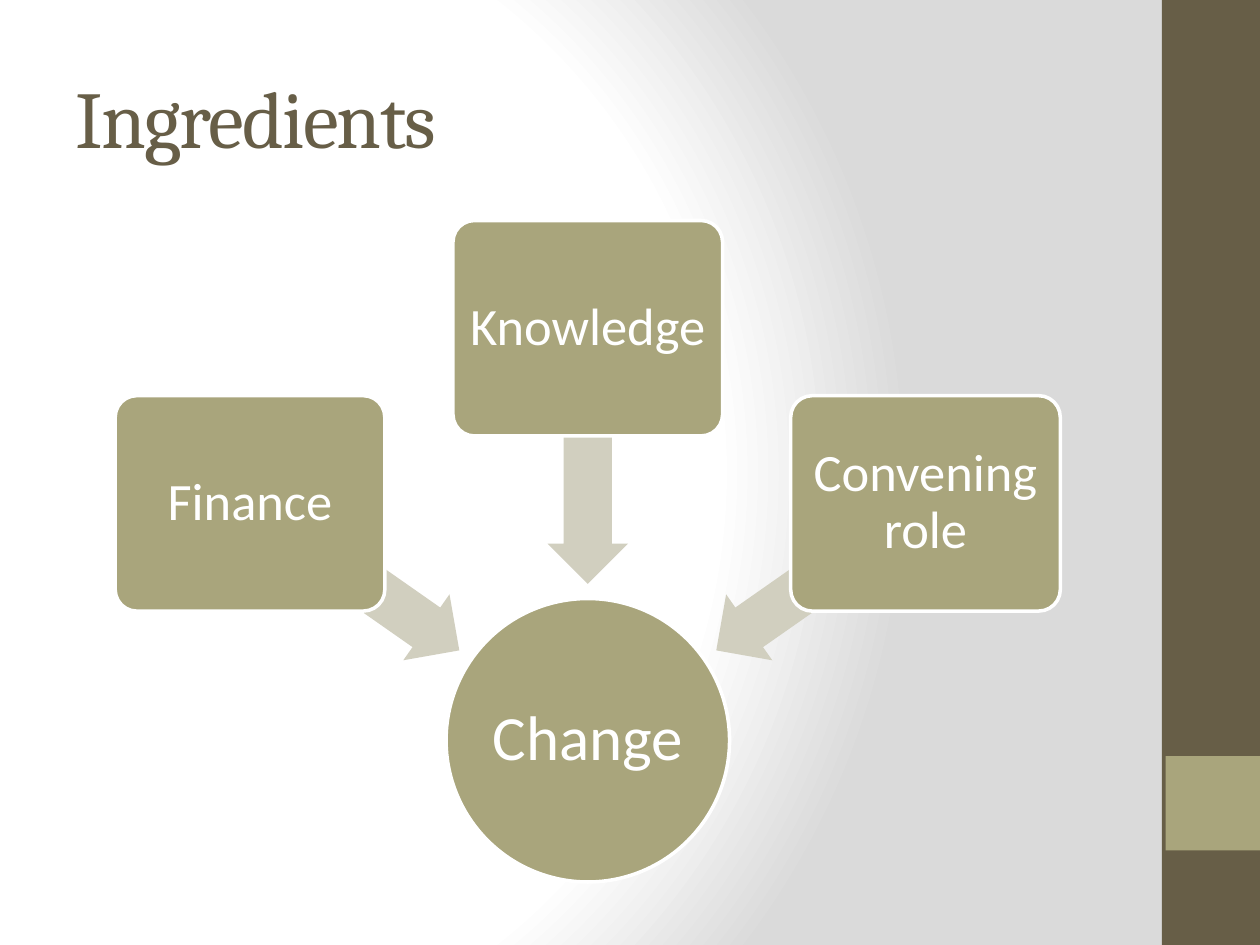
from dataclasses import dataclass

from lxml import etree
from pptx import Presentation
from pptx.dml.color import RGBColor
from pptx.enum.shapes import MSO_SHAPE
from pptx.enum.text import MSO_ANCHOR, MSO_AUTO_SIZE, PP_ALIGN
from pptx.oxml import parse_xml
from pptx.oxml.ns import nsdecls
from pptx.util import Pt

RECT = MSO_SHAPE.RECTANGLE
ROUND = MSO_SHAPE.ROUNDED_RECTANGLE
OVAL = MSO_SHAPE.OVAL
ARROW = MSO_SHAPE.LEFT_ARROW
LEFT, CENTER = PP_ALIGN.LEFT, PP_ALIGN.CENTER
MIDDLE = MSO_ANCHOR.MIDDLE
NO_FIT = MSO_AUTO_SIZE.NONE

BROWN = RGBColor(0x67, 0x5E, 0x47)
OLIVE = RGBColor(0xA9, 0xA5, 0x7C)
PALE = RGBColor(0xD1, 0xCF, 0xBF)
WHITE = RGBColor(0xFF, 0xFF, 0xFF)
GRAY = RGBColor(0xDA, 0xDA, 0xDA)

MID = 335.9
BOX_W, BOX_H, BOX_GAP = 154.1, 123.1, 193
ARROW_W, ARROW_H, ARROW_GAP = 146, 46, 133.2
DISC = 162


@dataclass
class Input:
    label: str
    side: int
    top: float
    arrow_y: float
    angle: float


INPUTS = [
    Input("Finance", -1, 226.1, 329.8, 215),
    Input("Knowledge", 0, 126, 260.6, 270),
    Input("Convening role", 1, 226.1, 329.8, 325),
]


def set_back(slide) -> None:
    stops = "".join(
        f'<a:gs pos="{pos}"><a:srgbClr val="{color}"/></a:gs>'
        for pos, color in ((0, WHITE), (75000, WHITE), (100000, GRAY))
    )
    back = parse_xml(
        f'<p:bg {nsdecls("p", "a")}><p:bgPr><a:gradFill rotWithShape="1">'
        f'<a:gsLst>{stops}</a:gsLst><a:path path="circle">'
        '<a:fillToRect l="20000" t="50000" r="100000" b="50000"/>'
        '</a:path></a:gradFill></p:bgPr></p:bg>'
    )
    etree.SubElement(back[0], f"{{{back.nsmap['a']}}}effectLst")
    slide.element.cSld.insert(0, back)


def put_shape(slide, kind, x: float, y: float, w: float, h: float,
              fill: RGBColor, edge: bool = False, angle: float = 0):
    shape = slide.shapes.add_shape(kind, Pt(x), Pt(y), Pt(w), Pt(h))
    shape.shadow.inherit = False
    shape.fill.solid()
    shape.fill.fore_color.rgb = fill
    shape.rotation = angle
    if edge:
        shape.line.color.rgb = WHITE
        shape.line.width = Pt(2)
    else:
        shape.line.fill.background()
    return shape


def put_text(shape, text: str, *, size: float, font: str, color: RGBColor,
             align=CENTER, inset: float = 0, leading: float = 1,
             track: float = 0) -> None:
    frame = shape.text_frame
    frame.word_wrap = True
    frame.auto_size = NO_FIT
    frame.vertical_anchor = MIDDLE
    if inset:
        frame.margin_left = frame.margin_right = Pt(inset)
        frame.margin_top = frame.margin_bottom = Pt(inset)
    para = frame.paragraphs[0]
    para.alignment = align
    para.line_spacing = leading
    run = para.add_run()
    run.text = text
    run.font.size = Pt(size)
    run.font.name = font
    run.font.color.rgb = color
    if track:
        run.font._element.set("spc", str(round(track * 100)))


def put_input(slide, item: Input) -> None:
    put_shape(slide, ARROW, MID + item.side * ARROW_GAP - ARROW_W / 2,
              item.arrow_y - ARROW_H / 2, ARROW_W, ARROW_H, PALE,
              angle=item.angle).adjustments[0] = 0.6
    box = put_shape(slide, ROUND, MID + item.side * BOX_GAP - BOX_W / 2,
                    item.top, BOX_W, BOX_H, OLIVE, edge=True)
    box.adjustments[0] = 0.1
    put_text(box, item.label, size=30, font="Calibri", color=WHITE,
             inset=4.3, leading=0.9)


def main() -> None:
    deck = Presentation()
    deck.slide_width, deck.slide_height = Pt(720), Pt(540)
    slide = deck.slides.add_slide(deck.slide_layouts[5])
    set_back(slide)
    put_shape(slide, RECT, 664, 0, 56, 540, BROWN)
    put_shape(slide, RECT, 666, 432, 54, 54, OLIVE)

    title = slide.shapes.title
    title.left, title.top = Pt(36), Pt(21.6)
    title.width, title.height = Pt(600), Pt(90)
    put_text(title, "Ingredients", size=46, font="Cambria", color=BROWN,
             align=LEFT, track=-1)

    disc = put_shape(slide, OVAL, MID - DISC / 2, 342, DISC, DISC, OLIVE,
                     edge=True)
    put_text(disc, "Change", size=36, font="Calibri", color=WHITE,
             inset=2, leading=0.9)
    for item in INPUTS:
        put_input(slide, item)
    deck.save("out.pptx")


if __name__ == "__main__":
    main()
